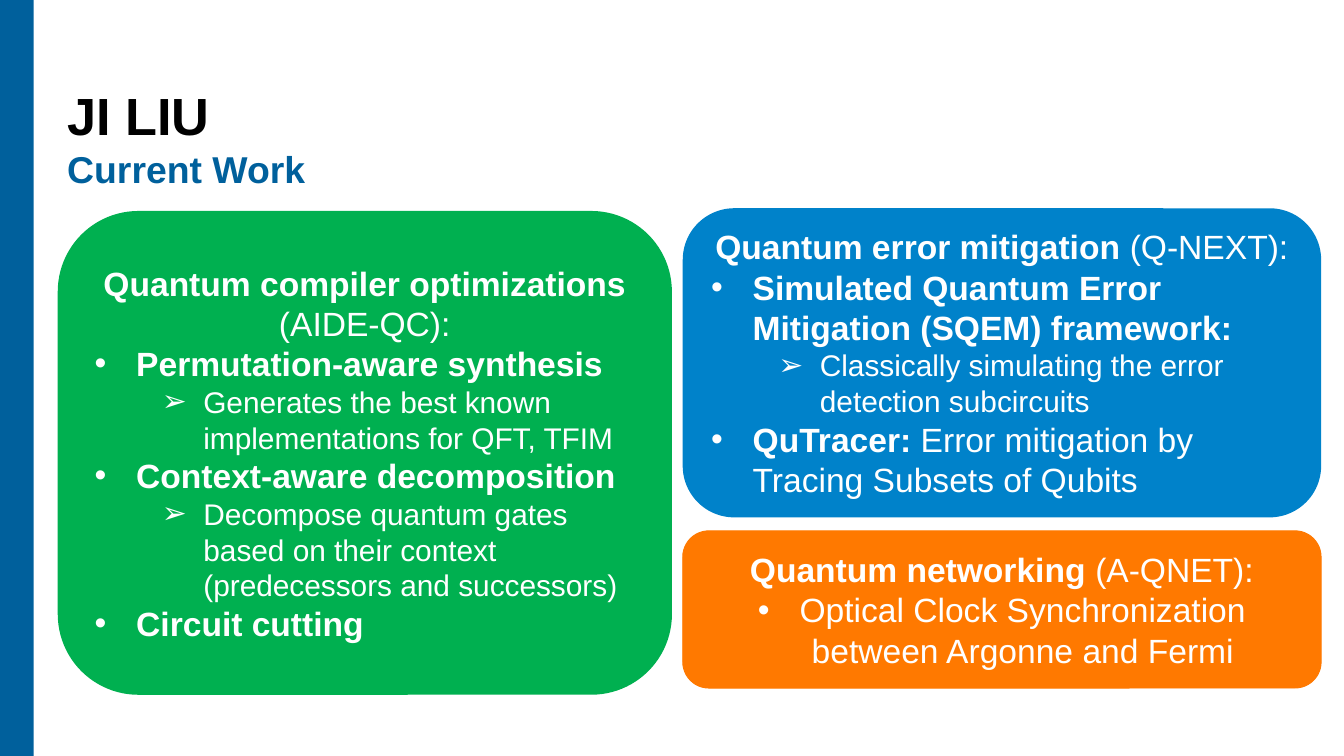
"""Build the slide on Ji Liu's current work in quantum computing."""
from lxml.etree import SubElement
from pptx import Presentation
from pptx.dml.color import RGBColor
from pptx.enum.shapes import MSO_SHAPE as Shape
from pptx.enum.text import MSO_ANCHOR as Anchor, MSO_AUTO_SIZE as AutoSize, PP_ALIGN as Align
from pptx.oxml.ns import qn
from pptx.util import Inches, Pt

NAVY = RGBColor(0x00, 0x60, 0x9C)
GREEN = RGBColor(0x00, 0xB0, 0x50)
BLUE = RGBColor(0x00, 0x82, 0xCA)
ORANGE = RGBColor(0xFF, 0x79, 0x00)
BLACK = RGBColor(0x00, 0x00, 0x00)
WHITE = RGBColor(0xFF, 0xFF, 0xFF)

CELL = 0.1
COLUMNS, ROWS = 100, 56.25
HEADING, POINT, DETAIL, CENTRED_POINT = range(4)
LEVELS = {
    HEADING: {"size": 18, "align": Align.CENTER, "bullet": None},
    POINT: {"size": 18, "align": Align.LEFT, "bullet": "•", "margin": 0.31, "level": 0},
    DETAIL: {"size": 16, "align": Align.LEFT, "bullet": "➢", "margin": 0.81, "level": 1},
    CENTRED_POINT: {"size": 18, "align": Align.CENTER, "bullet": "•", "margin": 0.31, "level": 0},
}

COMPILER = [
    (HEADING, "Quantum compiler optimizations ", "(AIDE-QC):"),
    (POINT, "Permutation-aware synthesis", ""),
    (DETAIL, "", "Generates the best known implementations for QFT, TFIM"),
    (POINT, "Context-aware decomposition", ""),
    (DETAIL, "", "Decompose quantum gates based on their context (predecessors and successors)"),
    (POINT, "Circuit cutting", ""),
]
MITIGATION = [
    (HEADING, "Quantum error mitigation ", "(Q-NEXT):"),
    (POINT, "Simulated Quantum Error Mitigation (SQEM) framework:", ""),
    (DETAIL, "", "Classically simulating the error detection subcircuits"),
    (POINT, "QuTracer: ", "Error mitigation by Tracing Subsets of Qubits"),
]
NETWORKING = [
    (HEADING, "Quantum networking ", "(A-QNET):"),
    (CENTRED_POINT, "", "Optical Clock Synchronization between Argonne and Fermi"),
]


def apply(target, values):
    """Set each named attribute of the target."""
    for name, value in values.items():
        setattr(target, name, value)


class WorkSlide:
    """Hold the type style and the current slide, and add its elements."""

    font_name = "Arial"

    def __init__(self, deck):
        self.slide = deck.slides.add_slide(deck.slide_layouts[1])

    def grid(self, *cells):
        """Turn grid cells into lengths."""
        return [Inches(cell * CELL) for cell in cells]

    def style(self, font, size, color, bold):
        """Format a font."""
        apply(font, {"name": self.font_name, "size": Pt(size), "bold": bold})
        font.color.rgb = color

    def header(self, index, area, text, size, color, anchor, spacing):
        """Place and format a placeholder holding one line."""
        holder = self.slide.placeholders[index]
        apply(holder, dict(zip(("left", "top", "width", "height"), self.grid(*area))))
        frame = holder.text_frame
        frame.text = text
        margins = dict.fromkeys(("margin_left", "margin_top", "margin_right", "margin_bottom"), 0)
        apply(frame, {**margins, "auto_size": AutoSize.NONE, "vertical_anchor": anchor})
        line = frame.paragraphs[0]
        self.indent(line, 0, 0, None)
        apply(line, {"alignment": Align.LEFT, "line_spacing": spacing, "space_before": Pt(0)})
        self.style(line.runs[0].font, size, color, True)

    def indent(self, paragraph, margin, hanging, bullet):
        """Set the indents and the bullet of a paragraph."""
        properties = paragraph._p.get_or_add_pPr()
        properties.set("marL", str(Inches(margin)))
        properties.set("indent", str(-Inches(hanging)))
        if bullet:
            SubElement(properties, qn("a:buFont")).set("typeface", self.font_name)
            SubElement(properties, qn("a:buChar")).set("char", bullet)
        else:
            SubElement(properties, qn("a:buNone"))

    def block(self, kind, area, color, outlined=False):
        """Add a filled shape."""
        shape = self.slide.shapes.add_shape(kind, *self.grid(*area))
        shape.shadow.inherit = False
        shape.fill.solid()
        shape.fill.fore_color.rgb = color
        if outlined:
            shape.line.color.rgb = color
            shape.line.width = Pt(0.5)
        else:
            shape.line.fill.background()
        return shape

    def card(self, area, color, items, outlined=False):
        """Add a rounded card with a heading and a list."""
        frame = self.block(Shape.ROUNDED_RECTANGLE, area, color, outlined).text_frame
        apply(frame, {"word_wrap": True, "vertical_anchor": Anchor.MIDDLE})
        for number, (kind, strong, plain) in enumerate(items):
            paragraph = frame.add_paragraph() if number else frame.paragraphs[0]
            look = LEVELS[kind]
            if look["bullet"]:
                self.indent(paragraph, look["margin"], 0.31, look["bullet"])
                paragraph.level = look["level"]
            paragraph.alignment = look["align"]
            for text, bold in ((strong, True), (plain, False)):
                if text:
                    run = paragraph.add_run()
                    run.text = text
                    self.style(run.font, look["size"], WHITE, bold)


def main():
    """Build and save the deck."""
    deck = Presentation()
    apply(deck, {"slide_width": Inches(COLUMNS * CELL), "slide_height": Inches(ROWS * CELL)})
    work = WorkSlide(deck)
    work.block(Shape.RECTANGLE, (0, 0, 2.5, ROWS), NAVY)
    work.header(0, (5, 2.7, 91.7, 8.2), "JI LIU", 28, BLACK, Anchor.BOTTOM, 0.9)
    work.header(1, (5, 10.9, 91.7, 4.8), "Current Work", 20, NAVY, Anchor.TOP, 1.0)
    work.card((4.3, 15.7, 45.7, 36), GREEN, COMPILER)
    work.card((50.8, 15.5, 47.5, 23), BLUE, MITIGATION)
    work.card((50.8, 39.5, 47.5, 11.7), ORANGE, NETWORKING, outlined=True)
    deck.save("out.pptx")


if __name__ == "__main__":
    main()
